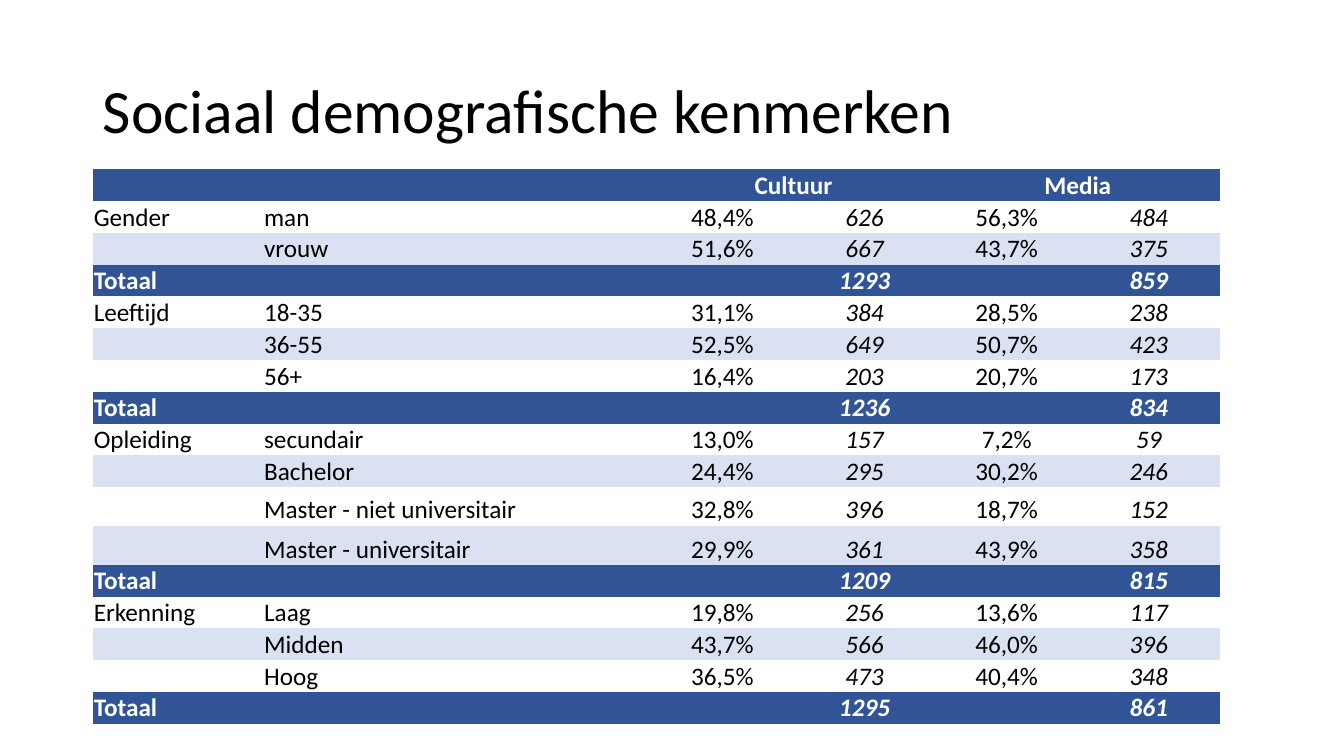
from pptx import Presentation
from pptx.dml.color import RGBColor
from pptx.enum.text import MSO_ANCHOR, PP_ALIGN
from pptx.oxml.ns import qn
from pptx.util import Inches, Pt

LEFT, CENTER = PP_ALIGN.LEFT, PP_ALIGN.CENTER
MIDDLE, BOTTOM = MSO_ANCHOR.MIDDLE, MSO_ANCHOR.BOTTOM

BLACK = RGBColor(0x00, 0x00, 0x00)
WHITE = RGBColor(0xFF, 0xFF, 0xFF)
DARK_BLUE = RGBColor(0x30, 0x54, 0x96)
PALE_BLUE = RGBColor(0xD9, 0xE1, 0xF2)

NO_STYLE_NO_GRID = "{2D5ABB26-0587-4C30-8999-92F81FD0307C}"
COLUMN_WIDTHS = [1.69, 3.85] + [1.41] * 4
ROW_HEIGHT = 0.29
TALL_ROWS = {"Master - niet universitair": 0.38, "Master - universitair": 0.39}
COUNT_COLUMNS = (3, 5)

# Per group: label, culture share and count, media share and count
GROUPS = {
    "Gender": [
        ("man", "48,4%", 626, "56,3%", 484),
        ("vrouw", "51,6%", 667, "43,7%", 375),
    ],
    "Leeftijd": [
        ("18-35", "31,1%", 384, "28,5%", 238),
        ("36-55", "52,5%", 649, "50,7%", 423),
        ("56+", "16,4%", 203, "20,7%", 173),
    ],
    "Opleiding": [
        ("secundair", "13,0%", 157, "7,2%", 59),
        ("Bachelor", "24,4%", 295, "30,2%", 246),
        ("Master - niet universitair", "32,8%", 396, "18,7%", 152),
        ("Master - universitair", "29,9%", 361, "43,9%", 358),
    ],
    "Erkenning": [
        ("Laag", "19,8%", 256, "13,6%", 117),
        ("Midden", "43,7%", 566, "46,0%", 396),
        ("Hoog", "36,5%", 473, "40,4%", 348),
    ],
}


def table_rows():
    """Return (values, fill) for each row; a dark fill marks header and totals."""
    rows = [(("", "", "Cultuur", "", "Media", ""), DARK_BLUE)]
    for group, members in GROUPS.items():
        for index, member in enumerate(members):
            name = "" if index else group
            rows.append(((name, *member), PALE_BLUE if index % 2 else None))
        culture, media = (sum(member[i] for member in members) for i in (2, 4))
        rows.append((("Totaal", "", "", culture, "", media), DARK_BLUE))
    return rows


class SlideBuilder:
    font_name = "Calibri"

    def __init__(self, deck):
        self.page = deck.slides.add_slide(deck.slide_layouts[5])

    def add_text(self, para, text, align, color, **formats):
        para.alignment = align
        span = para.add_run()
        span.text = str(text)
        span.font.color.rgb = color
        for name, value in {"name": self.font_name, **formats}.items():
            setattr(span.font, name, value)

    def title(self, text, left, top, width, height):
        box = self.page.shapes.title
        place = {"left": left, "top": top, "width": width, "height": height}
        for name, value in place.items():
            setattr(box, name, Inches(value))
        box.text_frame.vertical_anchor = MIDDLE
        box.text_frame.word_wrap = True
        para = box.text_frame.paragraphs[0]
        para.line_spacing = 0.9
        self.add_text(para, text, LEFT, BLACK, size=Pt(44))

    def cell(self, cell, text, fill, column):
        margins = {"margin_left": 0.01, "margin_right": 0.01,
                   "margin_top": 0.01, "margin_bottom": 0}
        for name, value in margins.items():
            setattr(cell, name, Inches(value))
        cell.vertical_anchor = BOTTOM
        if fill is None:
            cell.fill.background()
        else:
            cell.fill.solid()
            cell.fill.fore_color.rgb = fill
        if text != "":
            strong = fill == DARK_BLUE
            self.add_text(cell.text_frame.paragraphs[0], text,
                          CENTER if column >= 2 else LEFT,
                          WHITE if strong else BLACK, size=Pt(18),
                          bold=strong, italic=column in COUNT_COLUMNS)

    def table(self, rows, left, top):
        heights = [TALL_ROWS.get(values[1], ROW_HEIGHT) for values, _ in rows]
        frame = self.page.shapes.add_table(
            len(rows), len(COLUMN_WIDTHS), Inches(left), Inches(top),
            Inches(sum(COLUMN_WIDTHS)), Inches(sum(heights)))
        table = frame.table
        table.first_row = table.horz_banding = False
        for style in frame.element.iter(qn("a:tableStyleId")):
            style.text = NO_STYLE_NO_GRID
        for column, width in zip(table.columns, COLUMN_WIDTHS):
            column.width = Inches(width)
        for r, (values, fill) in enumerate(rows):
            table.rows[r].height = Inches(heights[r])
            for c, value in enumerate(values):
                self.cell(table.cell(r, c), value, fill, c)
        # Each header spans a share and a count column
        for c in (2, 4):
            table.cell(0, c).merge(table.cell(0, c + 1))


def main():
    deck = Presentation()
    deck.slide_width, deck.slide_height = Inches(13.33), Inches(7.5)
    builder = SlideBuilder(deck)
    builder.title("Sociaal demografische kenmerken", 0.92, 0.4, 11.5, 1.45)
    builder.table(table_rows(), 0.92, 1.68)
    deck.save("out.pptx")


if __name__ == "__main__":
    main()
